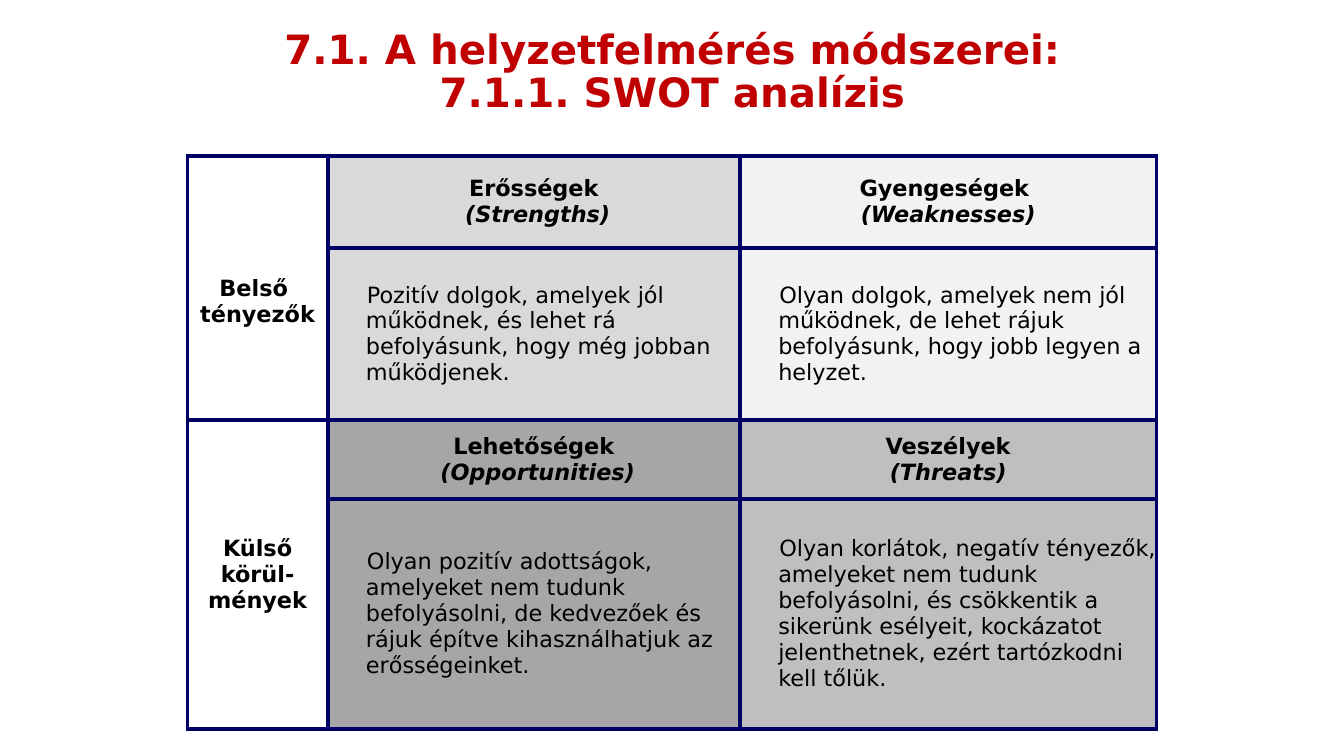
from lxml import etree
from pptx import Presentation
from pptx.dml.color import RGBColor
from pptx.enum.text import MSO_ANCHOR, PP_ALIGN
from pptx.oxml.ns import qn
from pptx.util import Inches, Pt

CENTER, LEFT = PP_ALIGN.CENTER, PP_ALIGN.LEFT
MIDDLE = MSO_ANCHOR.MIDDLE
FONT = "DejaVu Sans"
COLORS = {"title": "C00000", "text": "000000", "border": "000066",
          "strengths": "D9D9D9", "weaknesses": "F2F2F2",
          "opportunities": "A6A6A6", "threats": "BFBFBF"}

TITLE = "7.1. A helyzetfelmérés módszerei:\v7.1.1. SWOT analízis"
# Each band: row label, extra space above the label, two quadrants
BANDS = [
    (["Belső ", "tényezők"], 0.26, [
        ("strengths", ["Erősségek", " (Strengths)"],
         "Pozitív dolgok, amelyek jól működnek, és lehet rá befolyásunk, "
         "hogy még jobban működjenek."),
        ("weaknesses", ["Gyengeségek ", "(Weaknesses)"],
         "Olyan dolgok, amelyek nem jól működnek, de lehet rájuk befolyásunk, "
         "hogy jobb legyen a helyzet."),
    ]),
    (["Külső", "körül-", "mények"], 0, [
        ("opportunities", ["Lehetőségek", " (Opportunities)"],
         "Olyan pozitív adottságok, amelyeket nem tudunk befolyásolni, de kedvezőek "
         "és rájuk építve kihasználhatjuk az erősségeinket."),
        ("threats", ["Veszélyek", "(Threats)"],
         "Olyan korlátok, negatív tényezők, amelyeket nem tudunk befolyásolni, és "
         "csökkentik a sikerünk esélyeit, kockázatot jelenthetnek, ezért tartózkodni "
         "kell tőlük."),
    ]),
]
COLUMNS = [1.39, 4.09, 4.13]
ROWS = [0.91, 1.71, 0.78, 2.28]
TABLE_LEFT, TABLE_TOP = 1.86, 1.55
INDENT = 0.38


def style_font(font, size, color, bold=False, italic=False):
    font.name, font.size = FONT, Pt(size)
    font.bold, font.italic = bold, italic
    font.color.rgb = RGBColor.from_string(COLORS[color])


def add_borders(cell):
    """Put border lines before the fill, as the cell schema requires."""
    properties = cell._tc.get_or_add_tcPr()
    for position, side in enumerate(("lnL", "lnR", "lnT", "lnB")):
        line = etree.Element(qn(f"a:{side}"), w=str(Pt(3)))
        fill = etree.SubElement(line, qn("a:solidFill"))
        etree.SubElement(fill, qn("a:srgbClr"), val=COLORS["border"])
        properties.insert(position, line)


def fill_cell(cell, lines, align, first_indent, bold=False, italic_last=False, top=0):
    cell.vertical_anchor = MIDDLE
    cell.margin_left = cell.margin_right = cell.margin_bottom = 0
    cell.margin_top = Inches(top)
    cell.text_frame.text = "\n".join(lines)
    for number, para in enumerate(cell.text_frame.paragraphs, 1):
        para.alignment = align
        properties = para._p.get_or_add_pPr()
        properties.set("marL", str(Inches(INDENT)))
        properties.set("indent", str(Inches(first_indent)))
        italic = italic_last and number == len(lines)
        for span in para.runs:
            style_font(span.font, 16, "text", bold, italic)


def add_title(page):
    box = page.shapes.add_textbox(Inches(1.67), Inches(0.29), Inches(10), Inches(0.87))
    frame = box.text_frame
    frame.word_wrap = True
    frame.vertical_anchor = MIDDLE
    frame.margin_left = frame.margin_right = frame.margin_top = frame.margin_bottom = 0
    frame.text = TITLE
    para = frame.paragraphs[0]
    para.alignment, para.line_spacing = CENTER, 0.9
    for span in para.runs:
        style_font(span.font, 28.8, "title", bold=True)


def add_swot_table(page):
    table = page.shapes.add_table(
        len(ROWS), len(COLUMNS), Inches(TABLE_LEFT), Inches(TABLE_TOP),
        Inches(sum(COLUMNS)), Inches(sum(ROWS))).table
    table.first_row = table.horz_banding = False
    for column, width in zip(table.columns, COLUMNS):
        column.width = Inches(width)
    for row, height in zip(table.rows, ROWS):
        row.height = Inches(height)

    for band, (label, top, quadrants) in enumerate(BANDS):
        head_row, body_row = 2 * band, 2 * band + 1
        label_cell = table.cell(head_row, 0)
        label_cell.merge(table.cell(body_row, 0))
        fill_cell(label_cell, label, CENTER, -INDENT, bold=True, top=top)
        for column, (color, heading, body) in enumerate(quadrants, 1):
            head, text = table.cell(head_row, column), table.cell(body_row, column)
            fill_cell(head, heading, CENTER, -INDENT, bold=True, italic_last=True)
            fill_cell(text, [body], LEFT, 0.01)
            for cell in (head, text):
                cell.fill.solid()
                cell.fill.fore_color.rgb = RGBColor.from_string(COLORS[color])
        for row in (head_row, body_row):
            table.cell(row, 0).fill.background()

    for cell in table.iter_cells():
        add_borders(cell)


def main():
    deck = Presentation()
    deck.slide_width, deck.slide_height = Inches(13.33), Inches(7.5)
    page = deck.slides.add_slide(deck.slide_layouts[6])
    add_title(page)
    add_swot_table(page)
    deck.save("out.pptx")


if __name__ == "__main__":
    main()
